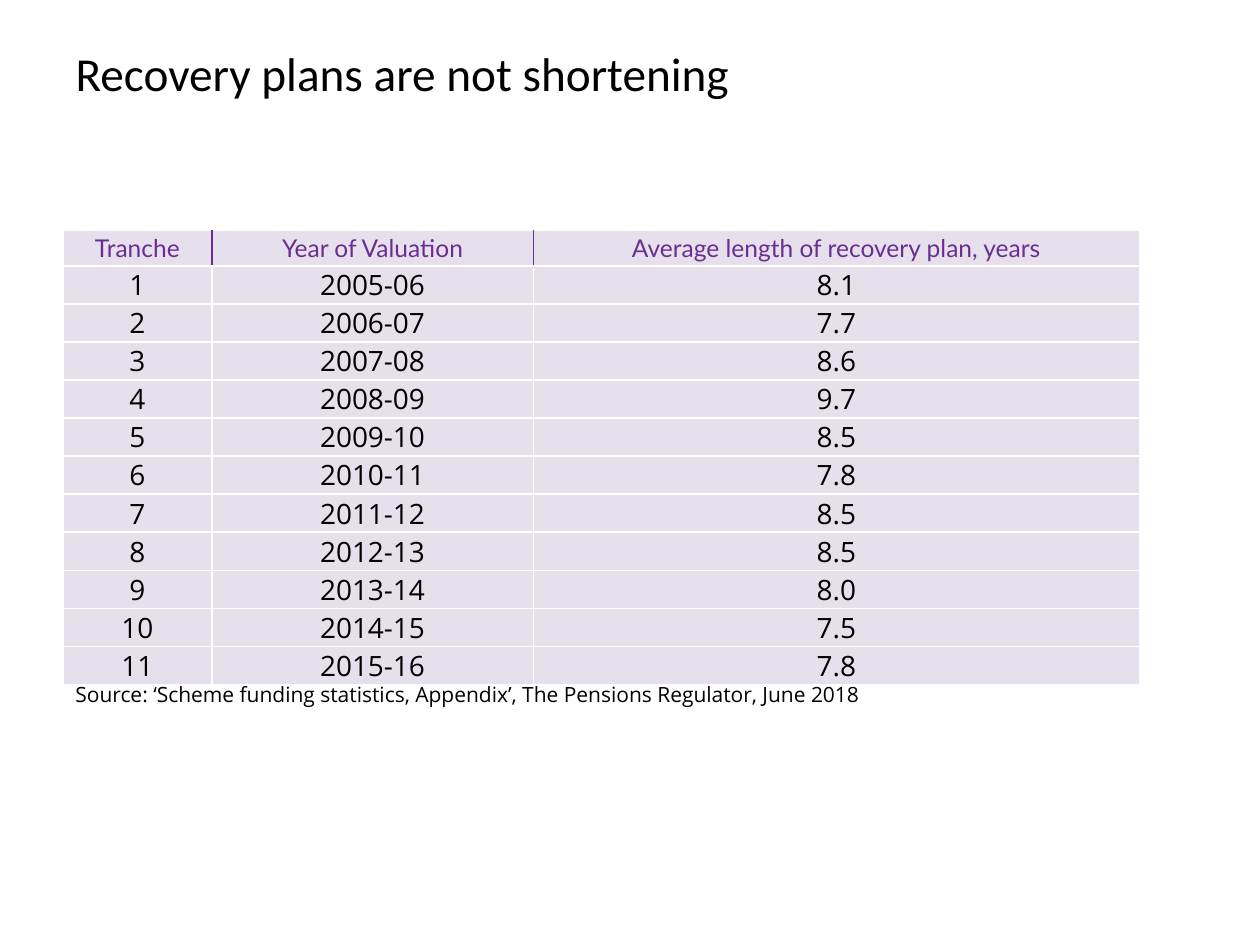
from dataclasses import dataclass

from lxml import etree
from pptx import Presentation
from pptx.dml.color import RGBColor
from pptx.enum import text
from pptx.oxml import ns
from pptx.util import Cm, Pt


@dataclass(frozen=True)
class Theme:
    black: str = "000000"
    white: str = "FFFFFF"
    purple: str = "6A2D91"
    lilac: str = "E6E0EC"
    title: tuple = ("Calibri", 27)
    header: tuple = ("Lato", 14)
    body: tuple = ("Open Sans", 16)
    source: tuple = ("Open Sans", 12)
    border: float = 1


THEME = Theme()
HEADER = ("Tranche", "Year of Valuation", "Average length of recovery plan, years")
LENGTHS = ("8.1", "7.7", "8.6", "9.7", "8.5", "7.8", "8.5", "8.5", "8.0", "7.5", "7.8")
FIRST_YEAR = 2005
COL_WIDTHS = (3, 6.48, 12.22)
HEADER_H, ROW_H, TALL_ROW_H = 0.71, 0.58, 0.76
TALL_ROW = 10


def write(tf, words, style, color, align):
    p = tf.paragraphs[0]
    p.alignment = align
    r = p.add_run()
    r.text = words
    name, size = style
    for key, value in {"name": name, "size": Pt(size), "bold": False}.items():
        setattr(r.font, key, value)
    r.font.color.rgb = RGBColor.from_string(color)


def set_border(cell, side, color):
    tc_pr = cell._tc.get_or_add_tcPr()
    ln = etree.SubElement(tc_pr, ns.qn(f"a:ln{side}"), w=str(Pt(THEME.border)))
    fill = etree.SubElement(ln, ns.qn("a:solidFill"))
    etree.SubElement(fill, ns.qn("a:srgbClr"), val=color)


def place_title(s, box, words):
    sp = s.shapes.title
    sp.left, sp.top, sp.width, sp.height = map(Cm, box)
    tf = sp.text_frame
    tf.vertical_anchor = text.MSO_ANCHOR.TOP
    write(tf, words, THEME.title, THEME.black, text.PP_ALIGN.LEFT)


def format_cell(cell, words, is_header, inner_sides):
    margins = ("margin_left", "margin_top", "margin_right", "margin_bottom")
    for key, value in {**dict.fromkeys(margins, 0),
                       "vertical_anchor": text.MSO_ANCHOR.MIDDLE}.items():
        setattr(cell, key, value)
    for side in "LRTB":
        dark = is_header and side in inner_sides
        set_border(cell, side, THEME.purple if dark else THEME.white)
    cell.fill.solid()
    cell.fill.fore_color.rgb = RGBColor.from_string(THEME.lilac)
    style, color = (THEME.header, THEME.purple) if is_header else (THEME.body, THEME.black)
    write(cell.text_frame, words, style, color, text.PP_ALIGN.CENTER)


def place_table(s, box):
    rows = [HEADER]
    for i, length in enumerate(LENGTHS):
        year = FIRST_YEAR + i
        rows.append((str(i + 1), f"{year}-{(year + 1) % 100:02d}", length))
    table = s.shapes.add_table(len(rows), len(HEADER), *map(Cm, box)).table
    for col, width in zip(table.columns, COL_WIDTHS):
        col.width = Cm(width)
    heights = {0: HEADER_H, TALL_ROW: TALL_ROW_H}
    last = len(HEADER) - 1
    for i, row in enumerate(rows):
        table.rows[i].height = Cm(heights.get(i, ROW_H))
        for j, words in enumerate(row):
            inner_sides = ("L" if j > 0 else "") + ("R" if j < last else "")
            format_cell(table.cell(i, j), words, i == 0, inner_sides)


def place_source(s, box, words):
    tf = s.shapes.add_textbox(*map(Cm, box)).text_frame
    tf.word_wrap = True
    tf.auto_size = text.MSO_AUTO_SIZE.SHAPE_TO_FIT_TEXT
    write(tf, words, THEME.source, THEME.black, text.PP_ALIGN.LEFT)


def main():
    prs = Presentation()
    prs.slide_width, prs.slide_height = Cm(25.4), Cm(19.05)
    s = prs.slides.add_slide(prs.slide_layouts[5])
    left = 1.27
    place_title(s, (left, 0.76, 22.86, 3.18), "Recovery plans are not shortening")
    place_table(s, (left, 4.65, sum(COL_WIDTHS), 8.26))
    place_source(s, (left, 13.61, 22.71, 0.76),
                 "Source: ‘Scheme funding statistics, Appendix’, The Pensions Regulator, June 2018")
    prs.save("out.pptx")


if __name__ == "__main__":
    main()
